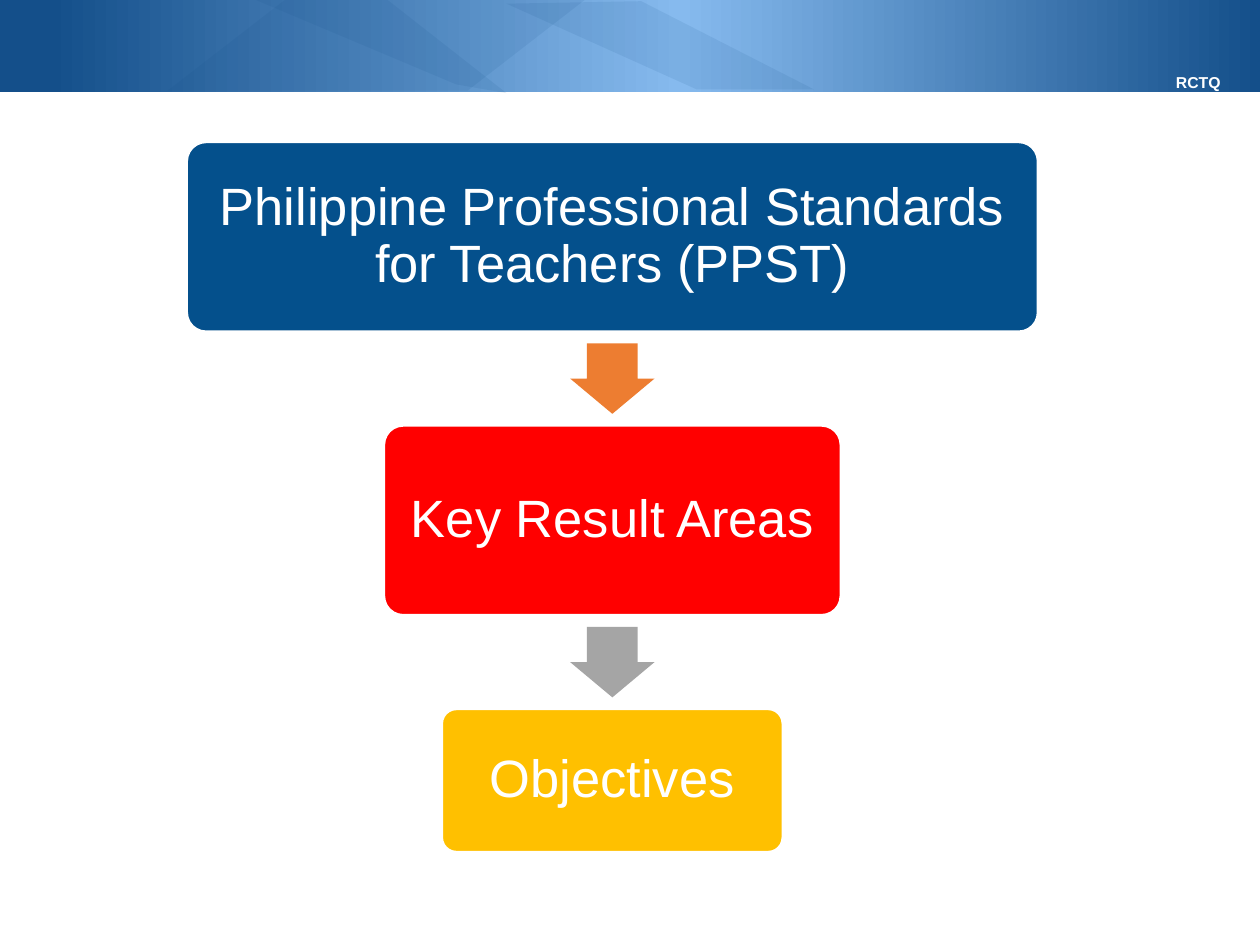
import copy
from dataclasses import dataclass

import pptx
import pptx.dml.color
import pptx.enum.shapes
import pptx.enum.text
import pptx.oxml
import pptx.oxml.ns
import pptx.util
from pptx.dml.color import RGBColor
from pptx.enum.shapes import MSO_SHAPE
from pptx.util import Inches


@dataclass(frozen=True)
class Theme:
    font: str = "Arial"
    step_size: int = 30
    label_size: int = 9
    white: str = "FFFFFF"
    banner_edge: str = "144F8A"
    banner_middle: str = "86BAEE"
    facet_alpha: int = 10


@dataclass(frozen=True)
class Step:
    text: str
    width: float
    height: float
    color: str
    arrow_color: str = ""


THEME = Theme()
STEPS = [
    Step("Philippine Professional Standards for Teachers (PPST)", 6.75, 1.5, "04508C", "ED7D31"),
    Step("Key Result Areas", 3.62, 1.5, "FF0000", "A5A5A5"),
    Step("Objectives", 2.7, 1.13, "FFC000"),
]
STEPS_TOP = 1.13
STEPS_CENTER = 4.86
STEP_GAP = 0.75
ARROW_WIDTH, ARROW_HEIGHT = 0.67, 0.56

SLIDE_WIDTH, SLIDE_HEIGHT = 10, 7.5
BANNER_HEIGHT = 0.73
BANNER_STOPS = [(0.04, THEME.banner_edge), (0.54, THEME.banner_middle), (1, THEME.banner_edge)]
FACETS = [
    [(2.26, 0), (4.64, 0), (3.71, 0.72), (1.33, 0.72)],
    [(4.02, 0.03), (5.09, 0.01), (6.46, 0.71), (5.53, 0.71)],
    [(2.03, 0), (3.05, -0.02), (4.02, 0.74), (3.62, 0.67)],
]


def add_plain_shape(slide, preset: MSO_SHAPE, left: float, top: float, width: float, height: float):
    """Add a preset shape without outline or shadow."""
    shape = slide.shapes.add_shape(preset, Inches(left), Inches(top), Inches(width), Inches(height))
    shape.shadow.inherit = False
    shape.line.fill.background()
    return shape


def fill_solid(shape, color: str) -> None:
    shape.fill.solid()
    shape.fill.fore_color.rgb = RGBColor.from_string(color)


def write_centered(frame, text: str, size: int, bold: bool = False):
    frame.word_wrap = True
    paragraph = frame.paragraphs[0]
    paragraph.text = text
    paragraph.alignment = pptx.enum.text.PP_ALIGN.CENTER
    paragraph.font.name = THEME.font
    paragraph.font.size = pptx.util.Pt(size)
    paragraph.font.bold = bold
    paragraph.font.color.rgb = RGBColor.from_string(THEME.white)
    return paragraph


def add_facet(slide, points: list[tuple[float, float]]) -> None:
    """Add one translucent polygon of the banner."""
    corners = [(Inches(x), Inches(y)) for x, y in points]
    builder = slide.shapes.build_freeform(*corners[0])
    builder.add_line_segments(corners[1:], close=True)
    facet = builder.convert_to_shape()
    facet.shadow.inherit = False
    facet.line.fill.background()
    fill_solid(facet, THEME.banner_edge)
    color = facet._element.spPr.find(".//" + pptx.oxml.ns.qn("a:srgbClr"))
    alpha = pptx.oxml.parse_xml(
        f'<a:alpha {pptx.oxml.ns.nsdecls("a")} val="{THEME.facet_alpha * 1000}"/>')
    color.append(alpha)


def add_banner(slide) -> None:
    banner = add_plain_shape(slide, MSO_SHAPE.RECTANGLE, 0, 0, SLIDE_WIDTH, BANNER_HEIGHT)
    banner.fill.gradient()
    banner.fill.gradient_angle = 0
    stop_list = banner._element.spPr.find(".//" + pptx.oxml.ns.qn("a:gsLst"))
    stop_list.append(copy.deepcopy(stop_list[-1]))
    for stop, (position, color) in zip(banner.fill.gradient_stops, BANNER_STOPS):
        stop.position = position
        stop.color.rgb = RGBColor.from_string(color)

    for points in FACETS:
        add_facet(slide, points)

    label = slide.shapes.add_textbox(Inches(9.02), Inches(0.53), Inches(0.98), Inches(0.25))
    write_centered(label.text_frame, "RCTQ", THEME.label_size, bold=True)


def add_step(slide, step: Step, top: float) -> None:
    box = add_plain_shape(slide, MSO_SHAPE.ROUNDED_RECTANGLE,
                          STEPS_CENTER - step.width / 2, top, step.width, step.height)
    box.adjustments[0] = 0.1
    fill_solid(box, step.color)
    box.line.color.rgb = RGBColor.from_string(THEME.white)
    box.line.width = pptx.util.Pt(1)
    frame = box.text_frame
    frame.vertical_anchor = pptx.enum.text.MSO_ANCHOR.MIDDLE
    frame.margin_left = frame.margin_right = Inches(0.16)
    write_centered(frame, step.text, THEME.step_size).line_spacing = 0.9


def add_arrow(slide, color: str, gap_top: float) -> None:
    """Add a down arrow in the middle of the gap below a step."""
    arrow = add_plain_shape(slide, MSO_SHAPE.DOWN_ARROW, STEPS_CENTER - ARROW_WIDTH / 2,
                            gap_top + (STEP_GAP - ARROW_HEIGHT) / 2, ARROW_WIDTH, ARROW_HEIGHT)
    arrow.adjustments[0] = 0.6
    arrow.adjustments[1] = 0.5
    fill_solid(arrow, color)


def main() -> None:
    deck = pptx.Presentation()
    deck.slide_width, deck.slide_height = Inches(SLIDE_WIDTH), Inches(SLIDE_HEIGHT)
    slide = deck.slides.add_slide(deck.slide_layouts.get_by_name("Blank"))
    add_banner(slide)
    top = STEPS_TOP
    for step in STEPS:
        add_step(slide, step, top)
        top += step.height
        if step.arrow_color:
            add_arrow(slide, step.arrow_color, top)
        top += STEP_GAP
    deck.save("out.pptx")


if __name__ == "__main__":
    main()
